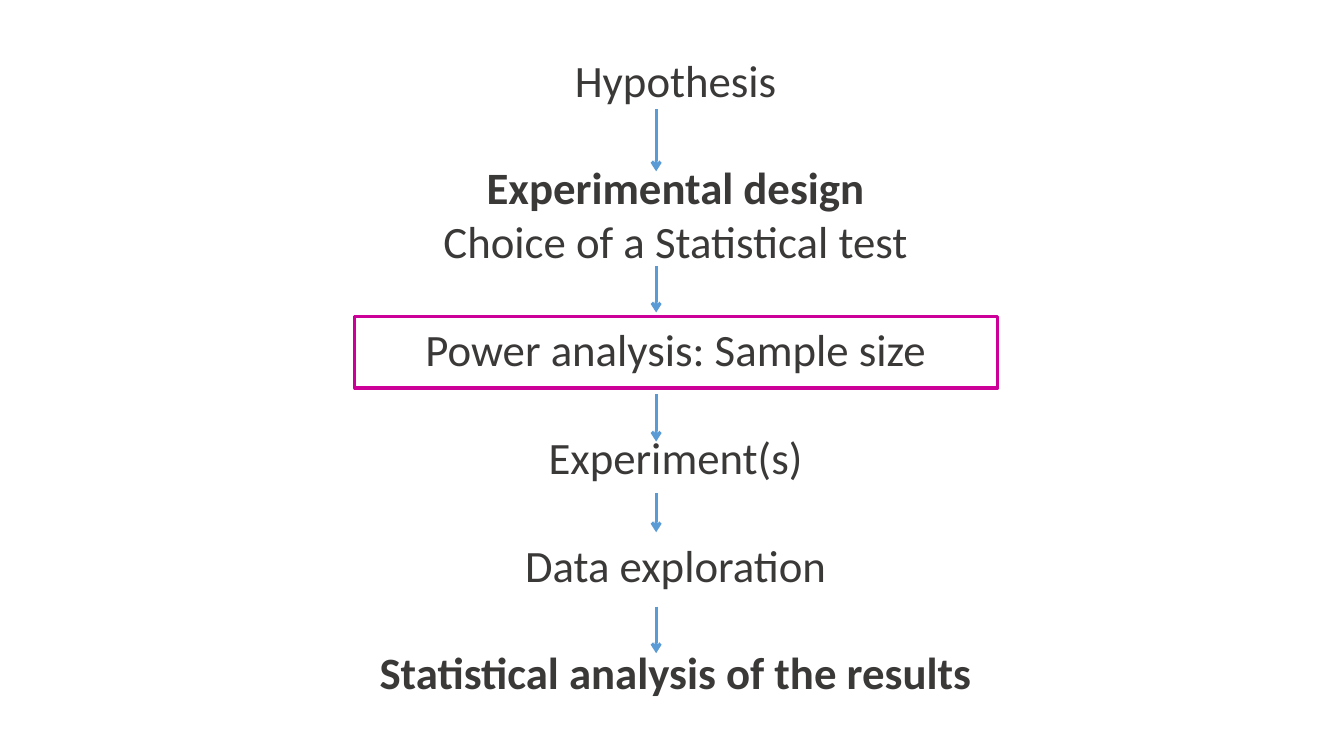
from pptx import Presentation
from pptx import util as u
from pptx.dml.color import RGBColor
from pptx.enum import shapes, text
from pptx.oxml import parse_xml
from pptx.oxml.ns import nsdecls

Pt = u.Pt


def paint(target, color):
    target.rgb = RGBColor.from_string(color)


deck = Presentation()
deck.slide_width, deck.slide_height = Pt(960), Pt(540)
slide = deck.slides.add_slide(deck.slide_layouts[6])

# Steps: wording, bold, starts a new stage after a gap
PITCH = 38.5
steps = [
    ("Hypothesis", False, False),
    ("Experimental design", True, True),
    ("Choice of a Statistical test", False, False),
    ("Power analysis: Sample size", False, True),
    ("Experiment(s)", False, True),
    ("Data exploration", False, True),
    ("Statistical analysis of the results", True, True),
]
box = slide.shapes.add_textbox(Pt(145.4), Pt(33.8), Pt(674.6), Pt(472.3))
frame = box.text_frame
frame.word_wrap = True
for i, (words, bold, gap) in enumerate(steps):
    para = frame.paragraphs[0] if i == 0 else frame.add_paragraph()
    layout = {
        "alignment": text.PP_ALIGN.CENTER,
        "line_spacing": Pt(PITCH),
        "space_before": Pt(PITCH if gap else 0),
    }
    for key, value in layout.items():
        setattr(para, key, value)
    run = para.add_run()
    run.text = words
    for key, value in {"name": "Calibri", "size": Pt(32), "bold": bold}.items():
        setattr(run.font, key, value)
    paint(run.font.color, "3B3838")

# Arrows between stages: top and bottom
MID = 468.7
for top, bottom in [(77.8, 122.4), (190, 223.2), (281.5, 315.4),
                    (352, 380.2), (433.4, 466.6)]:
    arrow = slide.shapes.add_connector(
        shapes.MSO_CONNECTOR.STRAIGHT, Pt(MID), Pt(top), Pt(MID), Pt(bottom))
    arrow.line.width = Pt(2.25)
    paint(arrow.line.color, "5B9BD5")
    arrow.line._get_or_add_ln().append(
        parse_xml(f'<a:tailEnd {nsdecls("a")} type="arrow"/>'))
    arrow._element.spPr.append(parse_xml(f'<a:effectLst {nsdecls("a")}/>'))

# Highlight around the power analysis
mark = slide.shapes.add_shape(
    shapes.MSO_SHAPE.RECTANGLE, Pt(253.4), Pt(226.1), Pt(459.4), Pt(51.1))
mark.shadow.inherit = False
mark.fill.background()
mark.line.width = Pt(2.25)
paint(mark.line.color, "CC0099")

deck.save("out.pptx")
